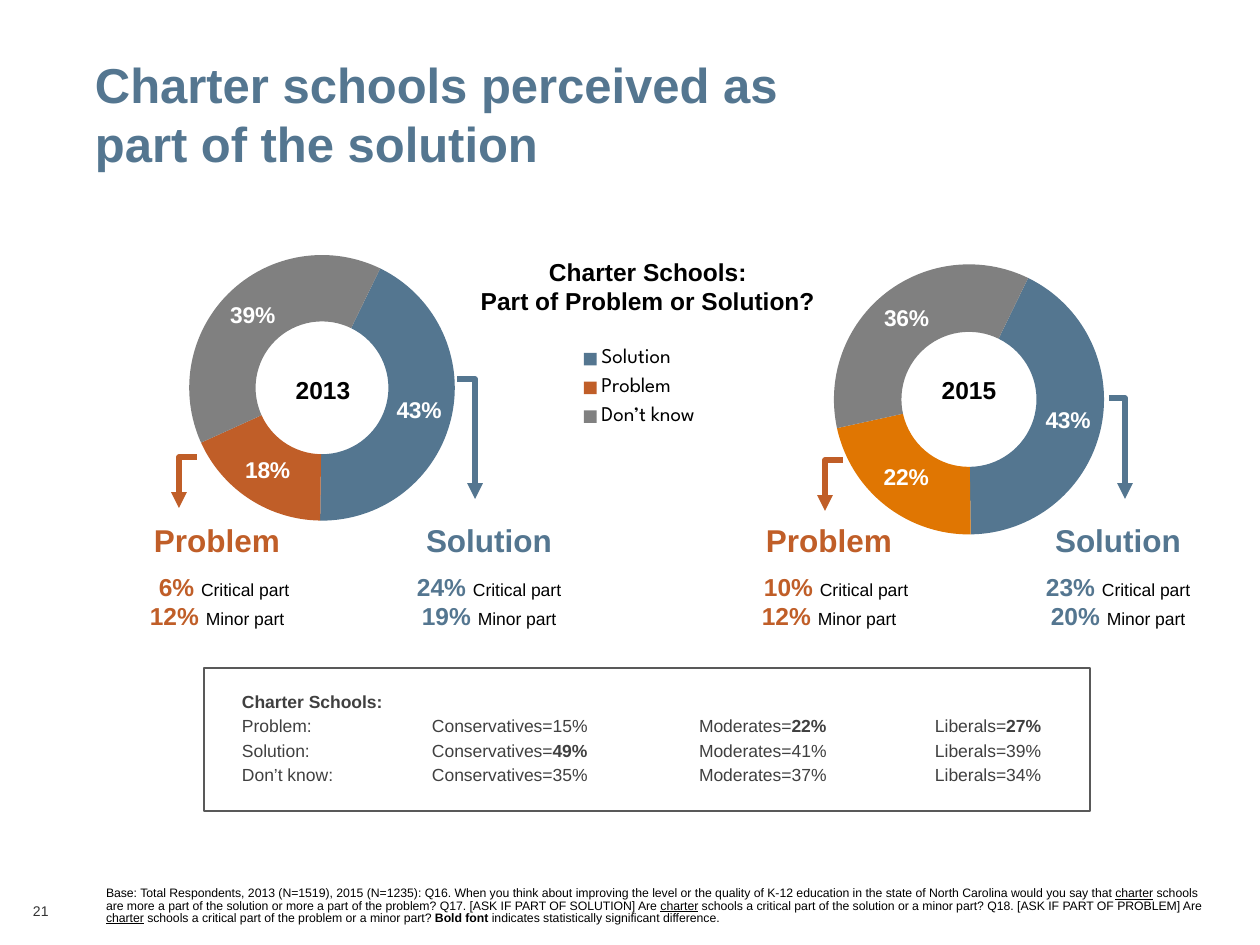
"""Build the slide on how charter schools are perceived in 2013 and 2015."""
from lxml.etree import SubElement
from pptx import Presentation
from pptx.chart.data import CategoryChartData
from pptx.dml.color import RGBColor
from pptx.enum.chart import XL_CHART_TYPE, XL_LEGEND_POSITION
from pptx.enum.shapes import MSO_SHAPE
from pptx.enum.text import MSO_ANCHOR, PP_ALIGN
from pptx.oxml.ns import qn
from pptx.util import Emu, Pt

SCALE = 914400 / 126
BLUE = RGBColor(0x54, 0x76, 0x90)
RUST = RGBColor(0xC0, 0x5E, 0x28)
ORANGE = RGBColor(0xE0, 0x76, 0x02)
GRAY = RGBColor(0x80, 0x80, 0x80)
BORDER = RGBColor(0x59, 0x59, 0x59)
TEXT = RGBColor(0x40, 0x40, 0x40)
NUMBER = RGBColor(0x33, 0x33, 0x33)
BLACK = RGBColor(0, 0, 0)
WHITE = RGBColor(0xFF, 0xFF, 0xFF)


def px(*lengths):
    return [Emu(round(length * SCALE)) for length in lengths]


def write(box, lines, margins=(0, 0, 0, 0), align=PP_ALIGN.LEFT):
    frame = box.text_frame
    frame.word_wrap = True
    frame.margin_left, frame.margin_top, frame.margin_right, frame.margin_bottom = px(*margins)
    frame.text = "\n" * (len(lines) - 1)
    for para, spans in zip(frame.paragraphs, lines):
        para.alignment = align
        for text, size, color, bold in spans:
            span = para.add_run()
            span.text = text
            span.font.name = "Arial"
            span.font.size = Pt(size)
            span.font.bold = bold
            span.font.color.rgb = color
    return frame.paragraphs


deck = Presentation()
deck.slide_width, deck.slide_height = px(1260, 945)
page = deck.slides.add_slide(deck.slide_layouts[6])
shapes = page.shapes

title = shapes.add_textbox(*px(95, 0, 741, 227))
write(title, [[("Charter schools perceived as part of the solution", 28, BLUE, True)]])
title.text_frame.vertical_anchor = MSO_ANCHOR.MIDDLE
write(shapes.add_textbox(*px(33, 903, 220, 16)), [[("21", 8, NUMBER, False)]])

charts = [
    (509, 246, ["1", "2", "3"], [0.43, 0.22, 0.36], ORANGE, (0.5, 0.06, 0.42, 0.88)),
    (79, 236, ["Solution", "Problem", "Don’t know"], [0.43, 0.18, 0.39], RUST, (0.17, 0.06, 0.41, 0.87)),
]
for left, top, categories, values, problem_color, plot_layout in charts:
    data = CategoryChartData(number_format="0%")
    data.categories = categories
    data.add_series("Series 1", values)
    chart = shapes.add_chart(XL_CHART_TYPE.DOUGHNUT, *px(left, top, 648, 307), data).chart
    chart.has_title = False
    chart.font.name = "League Spartan"
    chart.font.size = Pt(12)
    chart.font.color.rgb = BLACK
    plot = chart.plots[0]
    plot.vary_by_categories = True
    for index, color in enumerate([BLUE, problem_color, GRAY]):
        fill = plot.series[0].points[index].format.fill
        fill.solid()
        fill.fore_color.rgb = color
    plot.has_data_labels = True
    labels = plot.data_labels
    labels.show_value = True
    labels.show_percentage = False
    labels.number_format = "0%"
    labels.number_format_is_linked = False
    labels.font.name = "Arial"
    labels.font.size = Pt(13)
    labels.font.bold = True
    labels.font.color.rgb = WHITE
    root = chart.element
    for tag, value in [("c:firstSliceAng", "26"), ("c:holeSize", "50")]:
        for node in root.iter(qn(tag)):
            node.set("val", value)
    chart.has_legend = categories[0] == "Solution"
    layouts = [("c:plotArea", 0, plot_layout)]
    if chart.has_legend:
        chart.legend.position = XL_LEGEND_POSITION.RIGHT
        chart.legend.include_in_layout = False
        layouts.append(("c:legend", 1, (0.77, 0.34, 0.19, 0.31)))
    for tag, place, fractions in layouts:
        host = next(root.iter(qn(tag)))
        for stale in host.findall(qn("c:layout")):
            host.remove(stale)
        layout = SubElement(host, qn("c:layout"))
        host.insert(place, layout)
        manual = SubElement(layout, qn("c:manualLayout"))
        if tag == "c:plotArea":
            SubElement(manual, qn("c:layoutTarget")).set("val", "inner")
        for name in ["xMode", "yMode"]:
            SubElement(manual, qn(f"c:{name}")).set("val", "edge")
        for name, fraction in zip("xywh", fractions):
            SubElement(manual, qn(f"c:{name}")).set("val", str(fraction))

for year, left in [("2013", 295), ("2015", 941)]:
    write(shapes.add_textbox(*px(left, 375, 56, 30)), [[(year, 14, BLACK, True)]], align=PP_ALIGN.CENTER)

arrows = [
    (457, 379, 475, 499, BLUE),
    (1109, 398, 1125, 499, BLUE),
    (197, 457, 179, 508, RUST),
    (843, 460, 825, 511, RUST),
]
for start, top, turn, tip, color in arrows:
    builder = shapes.build_freeform(start, top, scale=SCALE)
    builder.add_line_segments([(turn, top), (turn, tip)], close=False)
    arrow = builder.convert_to_shape()
    arrow.shadow.inherit = False
    arrow.fill.background()
    arrow.line.color.rgb = color
    arrow.line.width = Pt(3)
    outline = arrow.element.spPr.find(qn("a:ln"))
    SubElement(outline, qn("a:tailEnd")).set("type", "triangle")

heading = ["Charter Schools:", "Part of Problem or Solution?"]
write(
    shapes.add_textbox(*px(447, 251, 402, 72)),
    [[(text, 14, BLACK, True)] for text in heading],
    (13, 6, 13, 6),
    PP_ALIGN.CENTER,
)

columns = [
    (137, "Problem", RUST, "6%", "12%", 14),
    (409, "Solution", BLUE, "24%", "19%", 0),
    (749, "Problem", RUST, "10%", "12%", 14),
    (1038, "Solution", BLUE, "23%", "20%", 0),
]
for left, name, color, critical, minor, indent in columns:
    label = shapes.add_textbox(*px(left, 515, 160, 50))
    write(label, [[(name, 18, color, True)]], (0, 6, 0, 6), PP_ALIGN.CENTER)
    parts = [(critical, "Critical part"), (minor, "Minor part")]
    lines = [[(f"{share} ", 14, color, True), (part, 10, BLACK, False)] for share, part in parts]
    shares = shapes.add_textbox(*px(left, 566, 160, 72))
    paras = write(shares, lines, (0, 6, 0, 6), PP_ALIGN.CENTER)
    paras[0]._p.get_or_add_pPr().set("marL", str(px(indent)[0]))

panel = shapes.add_shape(MSO_SHAPE.RECTANGLE, *px(204, 668, 886, 143))
panel.shadow.inherit = False
panel.fill.background()
panel.line.color.rgb = BORDER
panel.line.width = Pt(1)
panel.text_frame.vertical_anchor = MSO_ANCHOR.MIDDLE
groups = [
    [("Charter Schools:", True)],
    [("Problem:\tConservatives=15%\tModerates=", False), ("22%\t", True), ("Liberals=", False), ("27%", True)],
    [("Solution:\tConservatives=", False), ("49%", True), ("\tModerates=41%\tLiberals=39%", False)],
    [("Don’t know:\tConservatives=35%\tModerates=37%\tLiberals=34%", False)],
]
lines = [[(text, 10, TEXT, bold) for text, bold in group] for group in groups]
for para in write(panel, lines, (38, 13, 13, 19)):
    para.line_spacing = Pt(14)
    tabs = SubElement(para._p.get_or_add_pPr(), qn("a:tabLst"))
    for stop in px(190, 457, 693):
        tab = SubElement(tabs, qn("a:tab"))
        tab.set("pos", str(stop))
        tab.set("algn", "l")

footnote = [
    "Base: Total Respondents, 2013 (N=1519), 2015 (N=1235): Q16. When you think about improving the level or the "
    "quality of K-12 education in the state of North Carolina would you say that ",
    "charter",
    " schools are more a part of the solution or more a part of the problem? Q17. [ASK IF PART OF SOLUTION] Are ",
    "charter",
    " schools a critical part of the solution or a minor part? Q18. [ASK IF PART OF PROBLEM] Are ",
    "charter",
    " schools a critical part of the problem or a minor part? ",
    "Bold font",
    " indicates statistically significant difference.",
]
spans = [(text, 7, BLACK, text == "Bold font") for text in footnote]
para = write(shapes.add_textbox(*px(106, 888, 1103, 38)), [spans])[0]
para.line_spacing = Pt(7)
for span in para.runs:
    span.font.underline = span.text == "charter"

deck.save("out.pptx")
